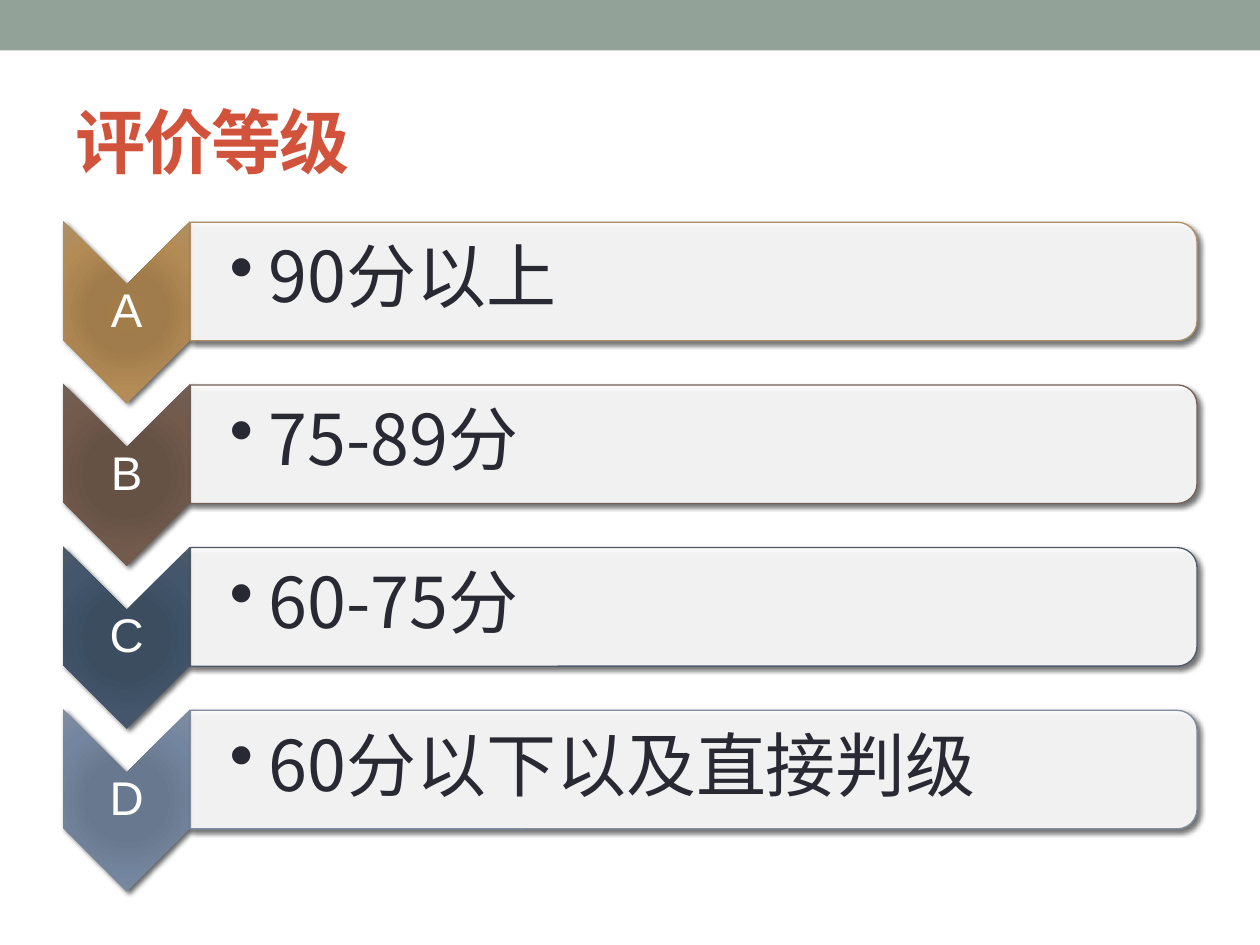
from lxml.etree import SubElement
from pptx import Presentation
from pptx.dml.color import RGBColor
from pptx.enum.shapes import MSO_SHAPE
from pptx.enum.text import MSO_ANCHOR, PP_ALIGN
from pptx.oxml.ns import qn
from pptx.util import Cm, Pt

COLORS = {
    "band": "93A299", "title": "D2533C", "text": "292934",
    "white": "FFFFFF", "shadow": "000000",
}
STOPS = (0, 34, 70, 100)
GRADES = [
    ("A", "90分以上", ("A37D49", "A07C4C", "B38B55", "AD8F67")),
    ("B", "75-89分", ("685044", "665145", "725A4D", "726056")),
    ("C", "60-75分", ("3B4D61", "3C4D60", "43566B", "4C5A6A")),
    ("D", "60分以下以及直接判级", ("677790", "68788E", "74869F", "808DA0")),
]
LATIN, CJK = "Arial", "Noto Sans CJK SC"


def rgb(value):
    return RGBColor.from_string(value)


def add_color(parent, value, alpha=None):
    clr = SubElement(parent, qn("a:srgbClr"), val=value)
    if alpha is not None:
        SubElement(clr, qn("a:alpha"), val=str(alpha * 1000))


def add_shadow(sp):
    sp.shadow.inherit = False
    effects = sp._element.spPr.find(qn("a:effectLst"))
    shadow = SubElement(effects, qn("a:outerShdw"), blurRad=str(Pt(3)),
                        dist=str(Pt(2)), dir="2700000", rotWithShape="0")
    add_color(shadow, COLORS["shadow"], 60)


def add_turned(s, kind, x, y, w, h):
    sp = s.shapes.add_shape(kind, Cm(x + (w - h) / 2), Cm(y + (h - w) / 2), Cm(h), Cm(w))
    sp.rotation = 90
    add_shadow(sp)
    return sp


def fill_radial(sp, colors):
    sp.fill.gradient()
    grad = sp._element.spPr.find(qn("a:gradFill"))
    for child in list(grad):
        grad.remove(child)
    stops = SubElement(grad, qn("a:gsLst"))
    for pos, color in zip(STOPS, colors):
        add_color(SubElement(stops, qn("a:gs"), pos=str(pos * 1000)), color)
    circle = SubElement(grad, qn("a:path"), {"path": "circle"})
    SubElement(circle, qn("a:fillToRect"), {side: "100000" for side in "ltrb"})


def add_text(s, box, text, size, font, color, inset):
    tf = s.shapes.add_textbox(*map(Cm, box)).text_frame
    tf.word_wrap = True
    tf.vertical_anchor = MSO_ANCHOR.MIDDLE
    tf.margin_left, tf.margin_top, tf.margin_right, tf.margin_bottom = map(Cm, inset)
    p = tf.paragraphs[0]
    r = p.add_run()
    r.text = text
    r.font.size = Pt(size)
    r.font.name = font
    r.font.color.rgb = rgb(color)
    SubElement(r._r.get_or_add_rPr(), qn("a:ea"), typeface=font)
    return p, r


def add_band(s, x, y, w, h):
    sp = s.shapes.add_shape(MSO_SHAPE.RECTANGLE, Cm(x), Cm(y), Cm(w), Cm(h))
    sp.shadow.inherit = False
    sp.fill.solid()
    sp.fill.fore_color.rgb = rgb(COLORS["band"])
    sp.line.fill.background()


def add_title(s, x, y, w, h):
    p, r = add_text(s, (x, y, w, h), "评价等级", 40, CJK, COLORS["title"],
                    (0.25, 0.13, 0.25, 0.13))
    r.font.bold = True
    r._r.get_or_add_rPr().set("spc", "-100")


def add_marker(s, x, y, w, h, letter, colors):
    sp = add_turned(s, MSO_SHAPE.CHEVRON, x, y, w, h)
    fill_radial(sp, colors)
    sp.line.fill.background()
    p, r = add_text(s, (x, y + w / 2, w, h - w), letter, 27, LATIN,
                    COLORS["white"], (0.05,) * 4)
    p.alignment = PP_ALIGN.CENTER
    p.line_spacing = 0.9
    p.space_after = Pt(9.45)


def add_panel(s, x, y, w, h, text, line_color):
    sp = add_turned(s, MSO_SHAPE.ROUND_2_SAME_RECTANGLE, x, y, w, h)
    sp.fill.solid()
    sp.fill.fore_color.rgb = rgb(COLORS["white"])
    clr = sp._element.spPr.find(qn("a:solidFill"))[0]
    SubElement(clr, qn("a:alpha"), val="90000")
    sp.line.color.rgb = rgb(line_color)
    sp.line.width = Pt(0.75)
    p, r = add_text(s, (x, y + 0.09, w - 0.12, 2.16), text, 40, CJK,
                    COLORS["text"], (0.79, 0.08, 0.08, 0.08))
    p.level = 1
    p.line_spacing = 0.9
    p.space_after = Pt(6)
    pPr = p._p.get_or_add_pPr()
    pPr.set("marL", str(Cm(0.79)))
    pPr.set("indent", str(Cm(-0.79)))
    SubElement(pPr, qn("a:buChar"), char="•")


def add_grades(s, x, y, w, pitch):
    marker_w, marker_h, panel_h = 2.57, 3.68, 2.39
    for i, (letter, text, colors) in enumerate(GRADES):
        top = y + i * pitch
        add_marker(s, x, top, marker_w, marker_h, letter, colors)
        add_panel(s, x + marker_w, top + 0.03, w - marker_w, panel_h, text, colors[-1])


def main():
    prs = Presentation()
    prs.slide_width, prs.slide_height = Cm(25.4), Cm(19.05)
    s = prs.slides.add_slide(prs.slide_layouts[6])
    add_band(s, 0, 0, 25.4, 1.02)
    add_title(s, 1.27, 1.47, 22.86, 2.74)
    add_grades(s, 1.27, 4.45, 22.86, 3.28)
    prs.save("out.pptx")


if __name__ == "__main__":
    main()
